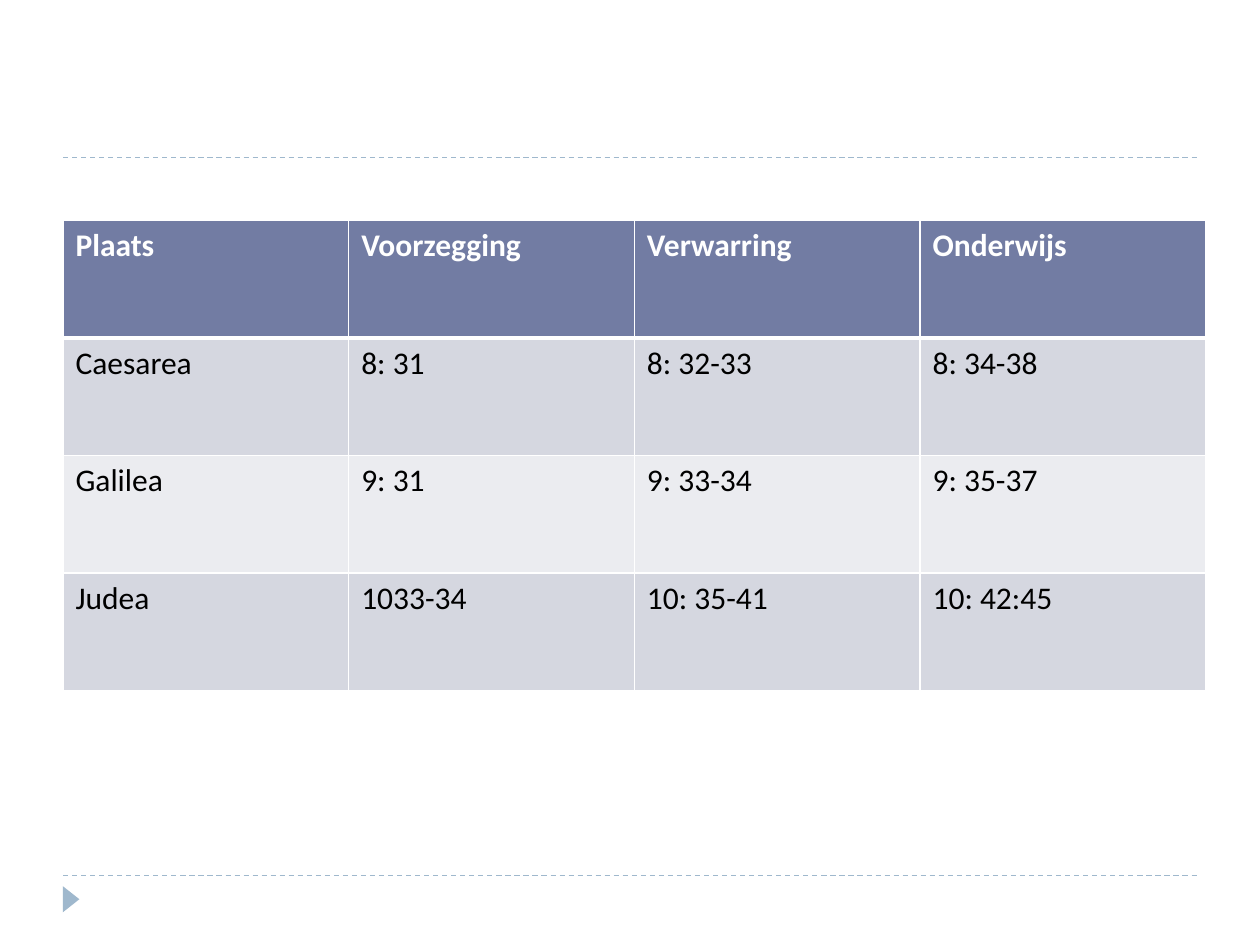
from lxml import etree
from pptx import Presentation
from pptx.dml.color import RGBColor
from pptx.enum import dml, shapes
from pptx.oxml import ns
from pptx.util import Pt

HUES = {"rule": "9FB8CD", "head": "727CA3", "odd": "D5D7E0",
        "even": "EBECF0", "white": "FFFFFF", "black": "000000"}
ROWS = [
    ["Plaats", "Voorzegging", "Verwarring", "Onderwijs"],
    ["Caesarea", "8: 31", "8: 32-33", "8: 34-38"],
    ["Galilea", "9: 31", "9: 33-34", "9: 35-37"],
    ["Judea", "1033-34", "10: 35-41", "10: 42:45"],
]


def hue(name):
    """Return the named colour."""
    return RGBColor.from_string(HUES[name])


def add_rule(slide, left, top, width):
    """Draw a dashed horizontal rule."""
    rule = slide.shapes.add_connector(
        shapes.MSO_CONNECTOR.STRAIGHT, Pt(left), Pt(top), Pt(left + width), Pt(top))
    rule.line.color.rgb = hue("rule")
    rule.line.width = Pt(0.75)
    rule.line.dash_style = dml.MSO_LINE.DASH
    etree.SubElement(rule._element.spPr, ns.qn("a:effectLst"))


def add_frame(slide, left, top, width, height):
    """Draw the rules around the body and the marker under them."""
    for y in (top, top + height):
        add_rule(slide, left, y, width)
    mark = slide.shapes.add_shape(
        shapes.MSO_SHAPE.ISOSCELES_TRIANGLE,
        Pt(left - 2.9), Pt(top + height + 8.7), Pt(15), Pt(9.5))
    mark.rotation = 90
    mark.shadow.inherit = False
    mark.fill.solid()
    mark.fill.fore_color.rgb = hue("rule")
    mark.line.fill.background()


def add_edges(cell, base):
    """Give a cell white borders, with its own widths above and below."""
    props = cell._tc.get_or_add_tcPr()
    for side, width in zip("LRTB", (1, 1, *base)):
        edge = etree.SubElement(props, ns.qn(f"a:ln{side}"), w=str(Pt(width)))
        fill = etree.SubElement(edge, ns.qn("a:solidFill"))
        etree.SubElement(fill, ns.qn("a:srgbClr"), val=HUES["white"])


def add_grid(slide, left, top, width, height):
    """Fill the box with the table of passages."""
    grid = slide.shapes.add_table(
        len(ROWS), len(ROWS[0]), Pt(left), Pt(top), Pt(width), Pt(height)).table
    for r, row in enumerate(ROWS):
        shade = "head" if r == 0 else "odd" if r % 2 else "even"
        for c, word in enumerate(row):
            cell = grid.cell(r, c)
            add_edges(cell, (3 if r == 1 else 1, 3 if r == 0 else 1))
            cell.fill.solid()
            cell.fill.fore_color.rgb = hue(shade)
            cell.text = word
            font = cell.text_frame.paragraphs[0].font
            font.name = "Calibri"
            font.size = Pt(18)
            font.bold = r == 0
            font.color.rgb = hue("black" if r else "white")


def main():
    """Build the slide and save it."""
    deck = Presentation()
    deck.slide_width, deck.slide_height = Pt(720), Pt(540)
    slide = deck.slides.add_slide(deck.slide_layouts[6])
    add_frame(slide, 36, 90, 648, 410.4)
    add_grid(slide, 36, 126, 653, 268.6)
    deck.save("out.pptx")


if __name__ == "__main__":
    main()
